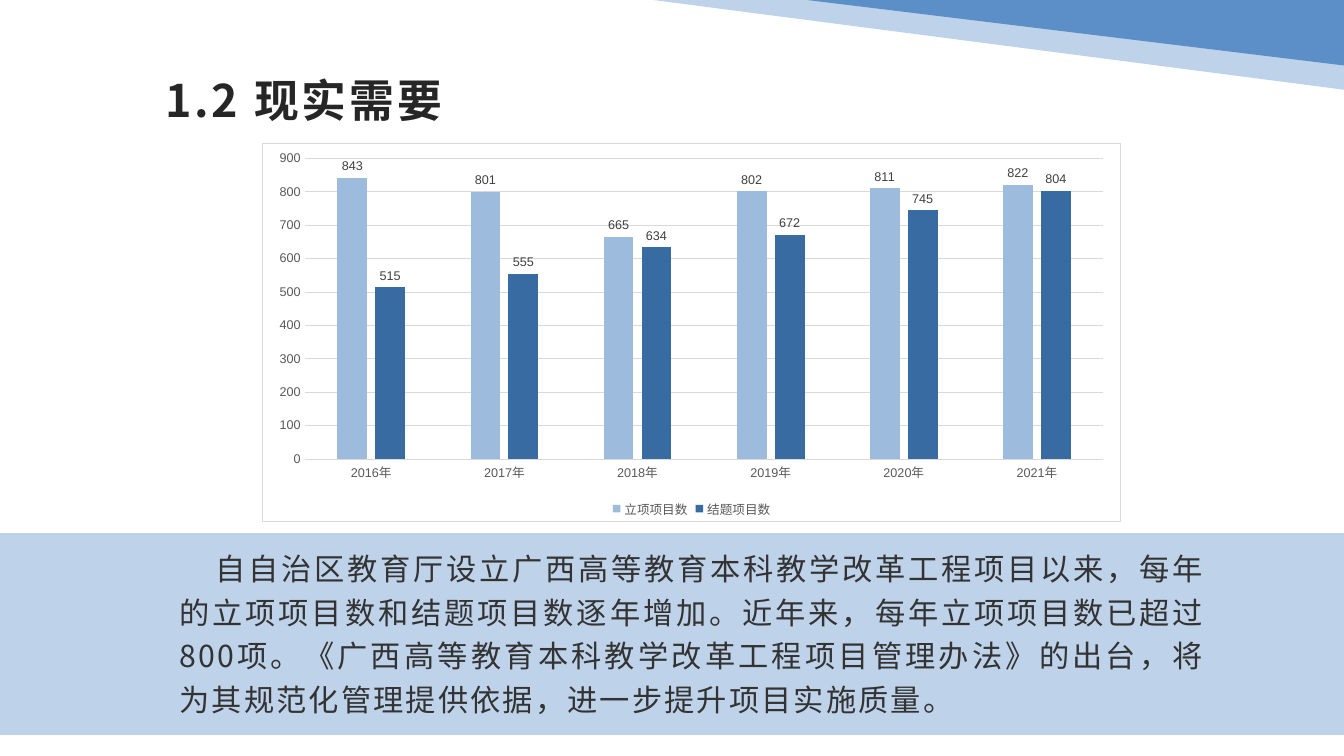
import pptx
import pptx.chart.data
import pptx.dml.color
import pptx.enum.chart
import pptx.enum.shapes
import pptx.enum.text
import pptx.oxml
import pptx.oxml.ns
import pptx.util

COLORS = {
    "pale": "BED2E9", "blue": "5C8FC7", "title": "262626", "body": "333333",
    "axis": "595959", "label": "404040", "rule": "D9D9D9",
    "approved": "9DBCDD", "completed": "386BA2",
}
TEXT_FONT, CHART_FONT = "Noto Sans CJK SC", "Arial"

presentation = pptx.Presentation()
presentation.slide_width = pptx.util.Inches(13.33)
presentation.slide_height = pptx.util.Inches(7.5)
slide = presentation.slides.add_slide(presentation.slide_layouts[6])
shapes = slide.shapes


def place(*percentages):
    """Turn alternating x and y percentages of the slide into lengths."""
    sides = (presentation.slide_width, presentation.slide_height)
    return [round(sides[i % 2] * share / 100) for i, share in enumerate(percentages)]


def color(name):
    return pptx.dml.color.RGBColor.from_string(COLORS[name])


# Corner stripes and the band behind the paragraph
outline = shapes.build_freeform(*place(100, 11.87))
outline.add_line_segments([place(100, 0.8), place(75, 0), place(48.6, 0)])
stripe = outline.convert_to_shape()
corner = shapes.add_shape(pptx.enum.shapes.MSO_SHAPE.ISOSCELES_TRIANGLE, *place(60, 0, 40, 8.67))
corner.adjustments[0] = 1
corner.element.spPr.xfrm.set("flipV", "1")
band = shapes.add_shape(pptx.enum.shapes.MSO_SHAPE.RECTANGLE, *place(0, 70.53, 100, 26.67))
for shape, fill in ((stripe, "pale"), (corner, "blue"), (band, "pale")):
    shape.shadow.inherit = False
    shape.fill.solid()
    shape.fill.fore_color.rgb = color(fill)
    shape.line.fill.background()

# Title and paragraph: box, text, size, colour, bold, letter spacing, side and end insets
texts = [
    (place(11.48, 7.33, 79.82, 11.6), "1.2 现实需要", 32, "title", True, 2, 0.08, 0.04),
    (place(12.53, 71.87, 77.87, 24),
     "自自治区教育厅设立广西高等教育本科教学改革工程项目以来，每年的立项项目数和结题项目数逐年增加。"
     "近年来，每年立项项目数已超过800项。《广西高等教育本科教学改革工程项目管理办法》的出台，"
     "将为其规范化管理提供依据，进一步提升项目实施质量。", 21.6, "body", False, 1.5, 0.09, 0),
]
paragraphs = []
for box, words, size, ink, bold, spacing, right, ends in texts:
    frame = shapes.add_textbox(*box).text_frame
    frame.word_wrap = True
    frame.margin_left = pptx.util.Inches(0.11)
    frame.margin_right = pptx.util.Inches(right)
    frame.margin_top = frame.margin_bottom = pptx.util.Inches(ends)
    paragraph = frame.paragraphs[0]
    run = paragraph.add_run()
    run.text = words
    run.font.name = TEXT_FONT
    run.font.size = pptx.util.Pt(size)
    run.font.bold = bold
    run.font.color.rgb = color(ink)
    properties = run.font._element
    properties.set("spc", str(round(spacing * 100)))
    latin = properties.find(pptx.oxml.ns.qn("a:latin"))
    latin.addnext(pptx.oxml.parse_xml(
        f'<a:ea {pptx.oxml.ns.nsdecls("a")} typeface="{TEXT_FONT}"/>'))
    paragraphs.append((frame, paragraph))

paragraphs[0][0].vertical_anchor = pptx.enum.text.MSO_ANCHOR.MIDDLE
body = paragraphs[1][1]
body.alignment = pptx.enum.text.PP_ALIGN.JUSTIFY
body.line_spacing = 1.2
body.space_after = pptx.util.Pt(10)
body._p.get_or_add_pPr().set("indent", str(pptx.util.Inches(0.36)))

# Chart of approved and completed projects
data = pptx.chart.data.CategoryChartData()
data.categories = [f"{year}年" for year in range(2016, 2022)]
data.add_series("立项项目数", (843, 801, 665, 802, 811, 822))
data.add_series("结题项目数", (515, 555, 634, 672, 745, 804))
chart = shapes.add_chart(
    pptx.enum.chart.XL_CHART_TYPE.COLUMN_CLUSTERED, *place(19.5, 18.93, 63.92, 50.13), data).chart
chart.has_title = False
chart.has_legend = True
chart.legend.position = pptx.enum.chart.XL_LEGEND_POSITION.BOTTOM
chart.legend.include_in_layout = False
chart.font.size = pptx.util.Pt(10)
chart.font.name = CHART_FONT
chart.element.chart.addnext(pptx.oxml.parse_xml(
    f'<c:spPr {pptx.oxml.ns.nsdecls("c", "a")}>'
    '<a:solidFill><a:srgbClr val="FFFFFF"/></a:solidFill><a:ln w="9525">'
    f'<a:solidFill><a:srgbClr val="{COLORS["rule"]}"/></a:solidFill></a:ln></c:spPr>'))

years, counts = chart.category_axis, chart.value_axis
for axis in (years, counts):
    axis.major_tick_mark = axis.minor_tick_mark = pptx.enum.chart.XL_TICK_MARK.NONE
counts.minimum_scale, counts.maximum_scale, counts.major_unit = 0, 900, 100
counts.has_major_gridlines = True
counts.format.line.fill.background()
for line in (years.format.line, counts.major_gridlines.format.line):
    line.color.rgb = color("rule")
    line.width = pptx.util.Pt(0.75)

plot = chart.plots[0]
plot.gap_width, plot.overlap = 219, -27
plot.vary_by_categories = False
fonts = [(part, "axis") for part in (years.tick_labels.font, counts.tick_labels.font, chart.legend.font)]
for series, fill in zip(plot.series, ("approved", "completed")):
    series.format.fill.solid()
    series.format.fill.fore_color.rgb = color(fill)
    labels = series.data_labels
    labels.show_value = True
    labels.position = pptx.enum.chart.XL_LABEL_POSITION.OUTSIDE_END
    fonts.append((labels.font, "label"))
for font, ink in fonts:
    font.name = CHART_FONT
    font.size = pptx.util.Pt(9)
    font.color.rgb = color(ink)

presentation.save("out.pptx")
